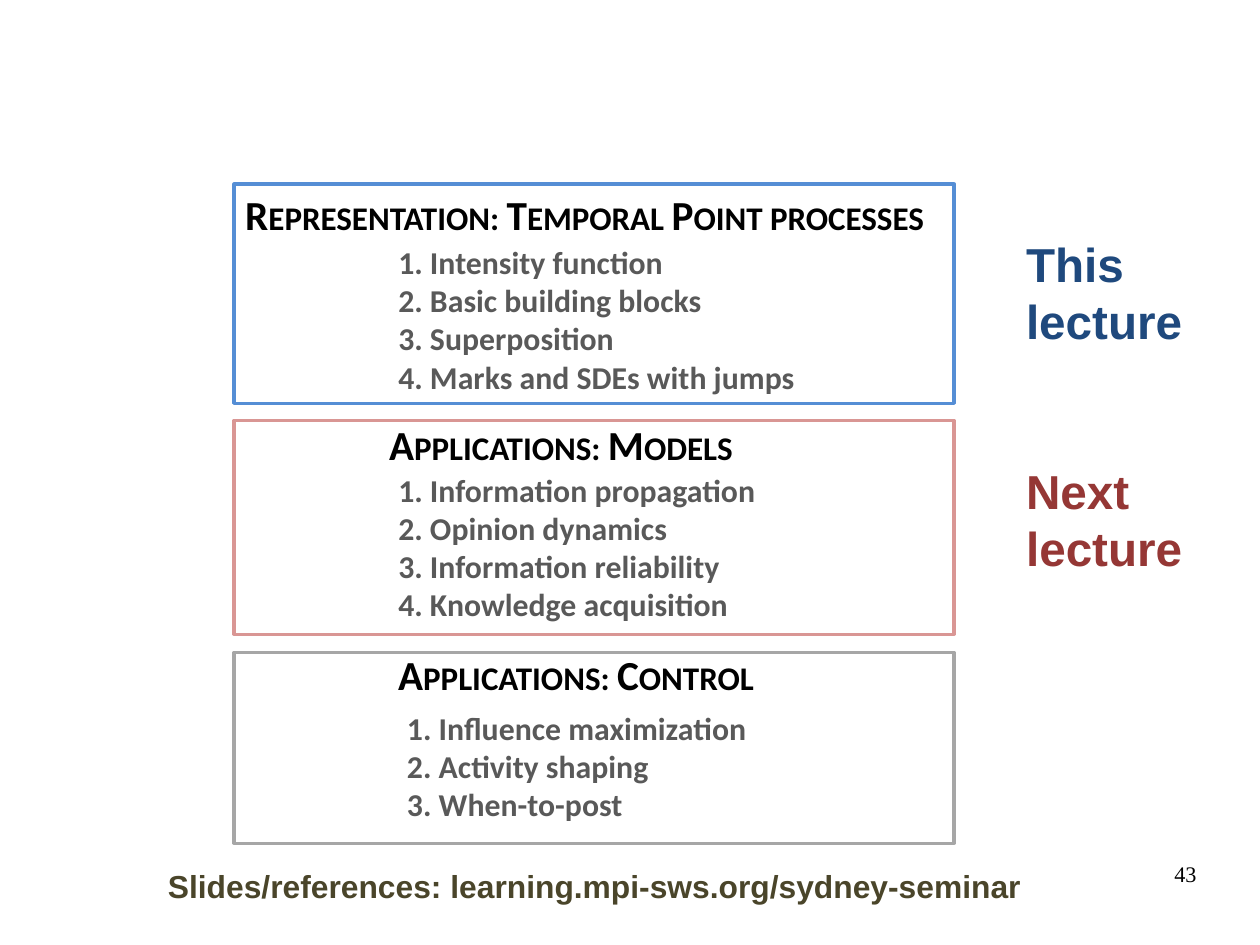
from dataclasses import dataclass
from pptx import Presentation
from pptx.dml.color import RGBColor
from pptx.enum import shapes, text
from pptx.util import Pt


@dataclass(frozen=True)
class Theme:
    heading: tuple = ("Calibri", 26, "000000", True)
    item: tuple = ("Calibri", 20, "595959", True)
    this: tuple = ("Arial", 30, "1F497D", True)
    next: tuple = ("Arial", 30, "953735", True)
    link: tuple = ("Arial", 20, "4A452A", True)
    number: tuple = ("Times New Roman", 14, "000000", False)
    border: float = 2


theme = Theme()
SLIDE_WIDTH, SLIDE_HEIGHT = 793.75, 595.25
PANEL_LEFT, PANEL_WIDTH = 147.5, 453.6
HEADING_HEIGHT, ITEM_WIDTH, ITEM_LINE = 38.9, 289.4, 24.3
INSET_X, INSET_Y = 7.2, 3.6

PANELS = [
    dict(top=115.9, height=138.2, line="558ED5",
         heading="Representation: Temporal Point processes", heading_at=(147.4, 115.9, 459.4),
         items=["Intensity function", "Basic building blocks", "Superposition",
                "Marks and SDEs with jumps"], items_at=(243.8, 149.5)),
    dict(top=264.9, height=134.6, line="D99694",
         heading="Applications: Models", heading_at=(238, 260.6, 294.5),
         items=["Information propagation", "Opinion dynamics", "Information reliability",
                "Knowledge acquisition"], items_at=(243.8, 292.8)),
    dict(top=411, height=120.2, line="A6A6A6",
         heading="Applications: Control", heading_at=(243.8, 405.4, 249.1),
         items=["Influence maximization", "Activity shaping", "When-to-post"],
         items_at=(249.3, 442.6)),
]
MIDDLE, TOP = text.MSO_ANCHOR.MIDDLE, text.MSO_ANCHOR.TOP
LEFT, RIGHT = text.PP_ALIGN.LEFT, text.PP_ALIGN.RIGHT
LABELS = [
    ("This lecture", (646.4, 147.8, 124.6, 72.7), theme.this, LEFT, MIDDLE),
    ("Next lecture", (646.4, 290.7, 136.1, 72.7), theme.next, LEFT, MIDDLE),
    ("Slides/references: learning.mpi-sws.org/sydney-seminar",
     (79.2, 545.5, 564.5, 24.5), theme.link, RIGHT, MIDDLE),
    ("43", (568.8, 542.2, 185, 41), theme.number, RIGHT, TOP),
]


def add_text(s, box, lines, style, align=LEFT, anchor=TOP, inset=(0, 0), small_caps=False):
    name, size, color, bold = style
    tf = s.shapes.add_textbox(*map(Pt, box)).text_frame
    tf.word_wrap = True
    tf.vertical_anchor = anchor
    tf.margin_left = tf.margin_right = Pt(inset[0])
    tf.margin_top = tf.margin_bottom = Pt(inset[1])
    for i, line in enumerate(lines):
        p = tf.add_paragraph() if i else tf.paragraphs[0]
        p.alignment = align
        r = p.add_run()
        r.text = line
        r.font.name, r.font.size, r.font.bold = name, Pt(size), bold
        r.font.color.rgb = RGBColor.from_string(color)
        if small_caps:
            r.font._element.set("cap", "small")


def add_panel(s, panel):
    sp = s.shapes.add_shape(shapes.MSO_SHAPE.RECTANGLE, Pt(PANEL_LEFT), Pt(panel["top"]),
                            Pt(PANEL_WIDTH), Pt(panel["height"]))
    sp.shadow.inherit = False
    sp.fill.background()
    sp.line.color.rgb = RGBColor.from_string(panel["line"])
    sp.line.width = Pt(theme.border)
    inset = (INSET_X, INSET_Y)
    add_text(s, (*panel["heading_at"], HEADING_HEIGHT), [panel["heading"]],
             theme.heading, inset=inset, small_caps=True)
    items = [f"{n}. {item}" for n, item in enumerate(panel["items"], 1)]
    height = len(items) * ITEM_LINE + 2 * INSET_Y
    add_text(s, (*panel["items_at"], ITEM_WIDTH, height), items, theme.item, inset=inset)


def main():
    prs = Presentation()
    prs.slide_width, prs.slide_height = Pt(SLIDE_WIDTH), Pt(SLIDE_HEIGHT)
    s = prs.slides.add_slide(prs.slide_layouts[6])
    for panel in PANELS:
        add_panel(s, panel)
    for label, box, style, align, anchor in LABELS:
        add_text(s, box, [label], style, align, anchor)
    prs.save("out.pptx")


if __name__ == "__main__":
    main()
